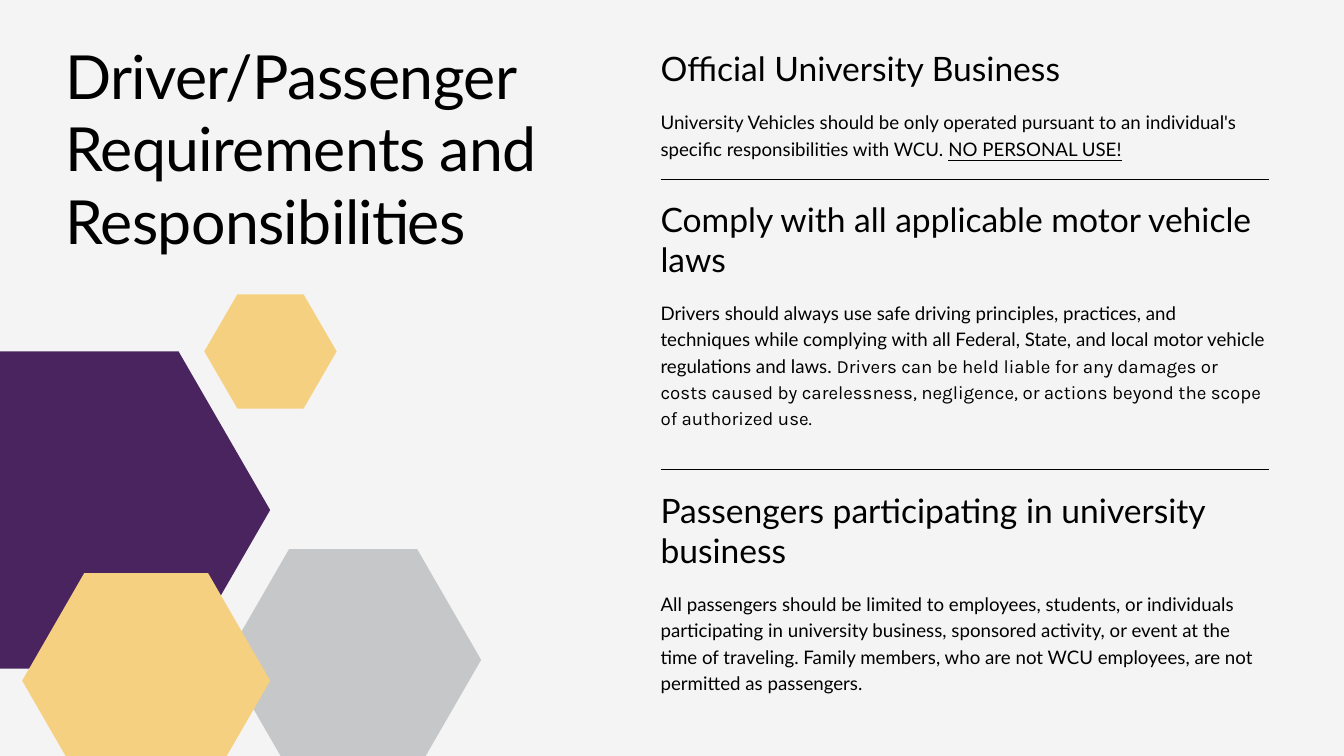
from lxml.etree import SubElement
from pptx import Presentation
from pptx.dml.color import RGBColor
from pptx.enum.shapes import MSO_CONNECTOR
from pptx.enum.text import MSO_AUTO_SIZE
from pptx.oxml.ns import qn
from pptx.util import Inches, Pt

COLORS = {
    "background": "F4F4F4",
    "ink": "000000",
    "purple": "4A245E",
    "gray": "C5C7C8",
    "gold": "F6D081",
}
FORMATS = {
    "title": {"size": Pt(65.1), "name": "Lato"},
    "heading": {"size": Pt(36), "name": "Lato"},
    "body": {"size": Pt(20), "name": "Lato"},
    "underlined": {"size": Pt(20), "name": "Lato", "underline": True},
    "karla": {"size": Pt(20), "name": "Karla"},
}
FRAME = {
    "margin_left": 0,
    "margin_top": 0,
    "margin_right": 0,
    "margin_bottom": 0,
    "word_wrap": True,
    "auto_size": MSO_AUTO_SIZE.SHAPE_TO_FIT_TEXT,
}
LEADING = {"title": 78.1, "heading": 43.2, "body": 28}
HEADING_LINE = 0.6
HEADING_GAP = 0.28
COLUMN_LEFT, COLUMN_WIDTH = 9.83, 9.05

HEXAGONS = [
    ((-1.43, 5.23, 5.45, 4.72), "purple"),
    ((3.35, 8.17, 3.81, 3.3), "gray"),
    ((3.04, 4.38, 1.97, 1.7), "gold"),
    ((0.33, 8.53, 3.69, 3.2), "gold"),
]
SECTIONS = [
    (0.72, 1.63, "Official University Business", 1, [
        ("University Vehicles should be only operated pursuant to an individual's "
         "specific responsibilities with WCU. ", "body"),
        ("NO PERSONAL USE!", "underlined"),
    ]),
    (2.96, 3.79, "Comply with all applicable motor vehicle laws", 2, [
        ("Drivers should always use safe driving principles, practices, and techniques "
         "while complying with all Federal, State, and local motor vehicle regulations "
         "and laws. ", "body"),
        ("Drivers can be held liable for any damages or costs caused by carelessness, "
         "negligence, or actions beyond the scope of authorized use.", "karla"),
    ]),
    (7.29, 3.01, "Passengers participating in university business", 2, [
        ("All passengers should be limited to employees, students, or individuals "
         "participating in university business, sponsored activity, or event at the "
         "time of traveling. Family members, who are not WCU employees, are not "
         "permitted as passengers.", "body"),
    ]),
]
DIVIDERS = [2.67, 6.99]


def apply_format(target, values):
    """Set each attribute in values on the target."""
    for attribute, value in values.items():
        setattr(target, attribute, value)


def add_text(slide, box, passages, leading):
    """Place one paragraph of styled passages in the box and return it."""
    frame = slide.shapes.add_textbox(*map(Inches, box)).text_frame
    apply_format(frame, FRAME)
    paragraph = frame.paragraphs[0]
    paragraph.line_spacing = Pt(leading)
    for wording, style in passages:
        run = paragraph.add_run()
        run.text = wording
        apply_format(run.font, FORMATS[style])
        run.font.color.rgb = RGBColor.from_string(COLORS["ink"])
    return paragraph


def add_title(slide, box):
    """Place the slide title with slightly tightened letters."""
    wording = "Driver/Passenger Requirements and Responsibilities"
    paragraph = add_text(slide, box, [(wording, "title")], LEADING["title"])
    for run in paragraph.runs:
        run._r.get_or_add_rPr().set("spc", "-70")


def add_hexagon(slide, box, color):
    """Draw a flat-topped hexagon that fills the box."""
    left, top, width, height = box
    corners = [(0.25, 0), (0.75, 0), (1, 0.5), (0.75, 1), (0.25, 1)]
    points = [(Inches(left + x * width), Inches(top + y * height)) for x, y in corners]
    builder = slide.shapes.build_freeform(Inches(left), Inches(top + height / 2))
    builder.add_line_segments(points, close=True)
    hexagon = builder.convert_to_shape()
    hexagon.shadow.inherit = False
    hexagon.fill.solid()
    hexagon.fill.fore_color.rgb = RGBColor.from_string(COLORS[color])
    hexagon.line.fill.background()


def add_section(slide, box, heading, heading_lines, passages):
    """Place a heading with its body text below it in the box."""
    left, top, width, height = box
    heading_height = heading_lines * HEADING_LINE
    body_offset = heading_height + HEADING_GAP
    add_text(slide, (left, top, width, heading_height),
             [(heading, "heading")], LEADING["heading"])
    add_text(slide, (left, top + body_offset, width, height - body_offset),
             passages, LEADING["body"])


def add_divider(slide, left, top, width):
    """Draw a thin horizontal rule."""
    divider = slide.shapes.add_connector(
        MSO_CONNECTOR.STRAIGHT, Inches(left), Inches(top), Inches(left + width), Inches(top))
    divider.line.color.rgb = RGBColor.from_string(COLORS["ink"])
    divider.line.width = Pt(0.75)
    SubElement(divider._element.spPr, qn("a:effectLst"))


def main():
    """Build the slide and save it."""
    presentation = Presentation()
    presentation.slide_width = Inches(20)
    presentation.slide_height = Inches(11.25)
    slide = presentation.slides.add_slide(presentation.slide_layouts[6])
    slide.background.fill.solid()
    slide.background.fill.fore_color.rgb = RGBColor.from_string(COLORS["background"])

    add_title(slide, (0.97, 0.57, 7.85, 3.27))
    for box, color in HEXAGONS:
        add_hexagon(slide, box, color)
    for top, height, heading, heading_lines, passages in SECTIONS:
        add_section(slide, (COLUMN_LEFT, top, COLUMN_WIDTH, height),
                    heading, heading_lines, passages)
    for top in DIVIDERS:
        add_divider(slide, COLUMN_LEFT, top, COLUMN_WIDTH)
    presentation.save("out.pptx")


if __name__ == "__main__":
    main()
